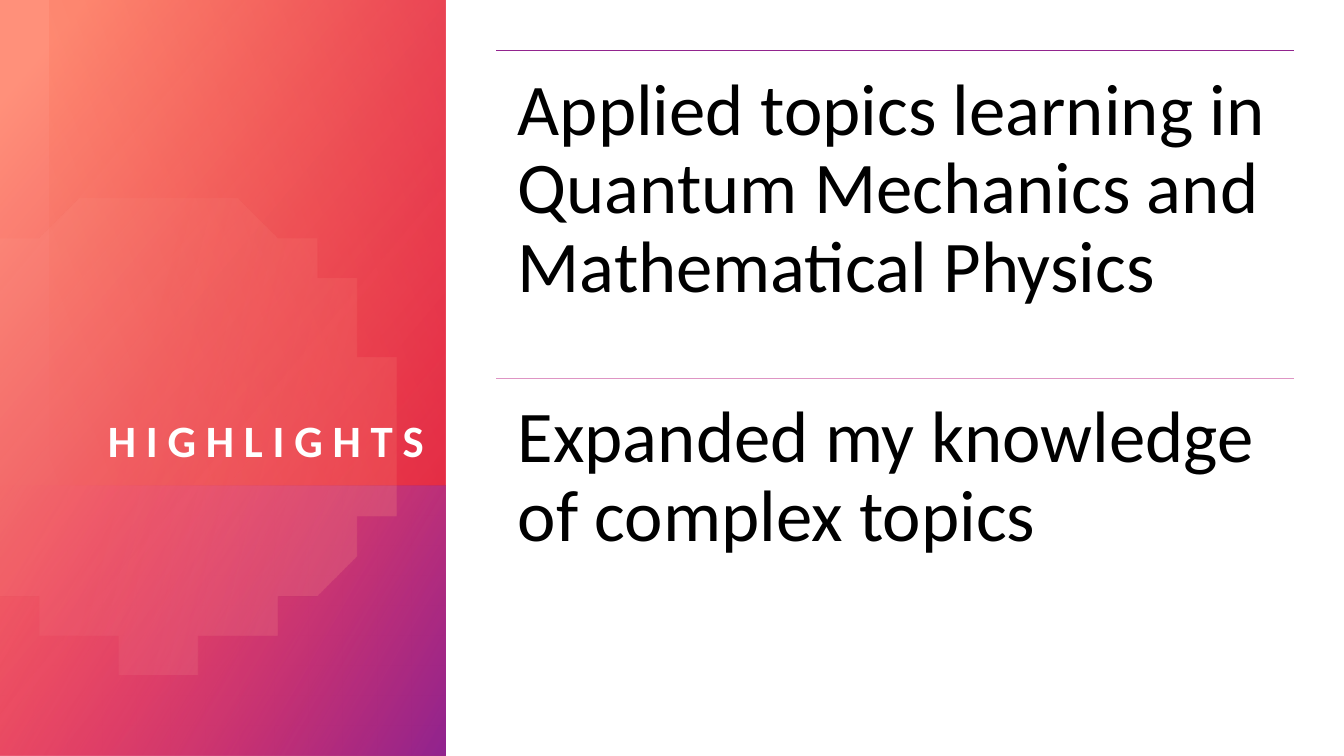
import math
from dataclasses import dataclass

from pptx import Presentation
from pptx import util as u
from pptx.dml.color import RGBColor
from pptx.enum import shapes, text
from pptx.oxml import parse_xml
from pptx.oxml.ns import nsdecls, qn

FONT = "Calibri"
PANEL_WIDTH, PAGE_HEIGHT = 11.23, 19.05
BAND_TOP = 12.23
TOPIC_LEFT, TOPIC_WIDTH, TOPIC_TOP, TOPIC_HEIGHT = 12.5, 20.1, 1.27, 8.26


@dataclass
class Stop:
    position: int
    color: str
    alpha: int = 100


@dataclass
class Panel:
    """A rectangle as it appears on the page, in cm, after a quarter turn."""
    left: float
    top: float
    width: float
    height: float
    rotation: int
    angle: int
    stops: list[Stop]


@dataclass
class Topic:
    wording: str
    rule_color: str


BASE = Panel(0, 0, PANEL_WIDTH, PAGE_HEIGHT, 270, 50,
             [Stop(8, "FF907A"), Stop(100, "DA002F", 89)])
PURPLE_BAND = Panel(0, BAND_TOP, PANEL_WIDTH, PAGE_HEIGHT - BAND_TOP, 270, 60,
                    [Stop(0, "FF5076", 0), Stop(99, "92248E")])
RED_GLOW = Panel(1.26, 0, PANEL_WIDTH - 1.26, BAND_TOP, 90, 110,
                 [Stop(0, "DA002F", 29), Stop(100, "FE4A00", 0)])
CIRCLE_STOPS = [Stop(36, "FFBCAF", 6), Stop(100, "FF907A", 26)]
TOPICS = [
    Topic("Applied topics learning in Quantum Mechanics and Mathematical Physics", "92248E"),
    Topic("Expanded my knowledge of complex topics", "DE95C4"),
]


def rgb(value: str) -> RGBColor:
    return RGBColor.from_string(value)


def fill_gradient(shape, stops: list[Stop], angle: int) -> None:
    """Give a shape a linear gradient with transparency and no outline."""
    marks = "".join(
        f'<a:gs pos="{stop.position * 1000}"><a:srgbClr val="{stop.color}">'
        f'<a:alpha val="{stop.alpha * 1000}"/></a:srgbClr></a:gs>'
        for stop in stops)
    gradient = parse_xml(
        f'<a:gradFill {nsdecls("a")} rotWithShape="1"><a:gsLst>{marks}</a:gsLst>'
        f'<a:lin ang="{angle * 60000}" scaled="0"/></a:gradFill>')
    shape.shadow.inherit = False
    shape.line.fill.background()
    shape.fill.background()
    properties = shape._element.spPr
    properties.replace(properties.find(qn("a:noFill")), gradient)


def add_panel(page, panel: Panel) -> None:
    shift = (panel.width - panel.height) / 2
    shape = page.shapes.add_shape(
        shapes.MSO_SHAPE.RECTANGLE, u.Cm(panel.left + shift), u.Cm(panel.top - shift),
        u.Cm(panel.height), u.Cm(panel.width))
    shape.rotation = panel.rotation
    shape._element.spPr.xfrm.set("flipH", "1")
    fill_gradient(shape, panel.stops, panel.angle)


def add_cut_circle(page, center_x: float, center_y: float, radius: float) -> None:
    """Draw a circle cut straight along the left edge of the page."""
    limit = math.acos(-center_x / radius)
    steps = 120
    angles = [limit * (2 * step / steps - 1) for step in range(steps + 1)]
    points = [(center_x + radius * math.cos(angle), center_y + radius * math.sin(angle))
              for angle in angles]
    builder = page.shapes.build_freeform(*points[0], scale=u.Cm(1))
    builder.add_line_segments(points[1:], close=True)
    fill_gradient(builder.convert_to_shape(), CIRCLE_STOPS, 14)


def add_text(page, left: float, top: float, width: float, height: float, wording: str,
             size: int, color: str, margin: float = 0):
    """Add a wrapped one-paragraph box; return its frame, paragraph and run."""
    box = page.shapes.add_textbox(u.Cm(left), u.Cm(top), u.Cm(width), u.Cm(height))
    frame = box.text_frame
    frame.word_wrap = True
    frame.margin_left = frame.margin_right = u.Cm(margin)
    frame.margin_top = frame.margin_bottom = u.Cm(margin)
    para = frame.paragraphs[0]
    span = para.add_run()
    span.text = wording
    span.font.name = FONT
    span.font.size = u.Pt(size)
    span.font.color.rgb = rgb(color)
    return frame, para, span


def add_title(page) -> None:
    frame, para, span = add_text(page, 1.27, 2.41, 9.42, 9.35, "HIGHLIGHTS", 32, "FFFFFF")
    frame.vertical_anchor = text.MSO_ANCHOR.BOTTOM
    para.alignment = text.PP_ALIGN.RIGHT
    span.font.bold = True
    span.font._element.set("spc", "700")


def add_topic(page, topic: Topic, top: float) -> None:
    rule = page.shapes.add_connector(
        shapes.MSO_CONNECTOR.STRAIGHT, u.Cm(TOPIC_LEFT), u.Cm(top),
        u.Cm(TOPIC_LEFT + TOPIC_WIDTH), u.Cm(top))
    rule.line.color.rgb = rgb(topic.rule_color)
    rule.line.width = u.Pt(1)
    rule._element.spPr.append(parse_xml(f'<a:effectLst {nsdecls("a")}/>'))
    _, para, _ = add_text(page, TOPIC_LEFT, top, TOPIC_WIDTH, TOPIC_HEIGHT,
                          topic.wording, 52, "000000", margin=0.55)
    para.line_spacing = 0.9


def main() -> None:
    deck = Presentation()
    deck.slide_width, deck.slide_height = u.Cm(33.87), u.Cm(PAGE_HEIGHT)
    page = deck.slides.add_slide(deck.slide_layouts[6])
    page.background.fill.solid()
    page.background.fill.fore_color.rgb = rgb("FFFFFF")
    add_panel(page, BASE)
    add_panel(page, PURPLE_BAND)
    add_cut_circle(page, 4.03, 10.79, 5.82)
    add_panel(page, RED_GLOW)
    add_title(page)
    for index, topic in enumerate(TOPICS):
        add_topic(page, topic, TOPIC_TOP + index * TOPIC_HEIGHT)
    deck.save("out.pptx")


if __name__ == "__main__":
    main()
